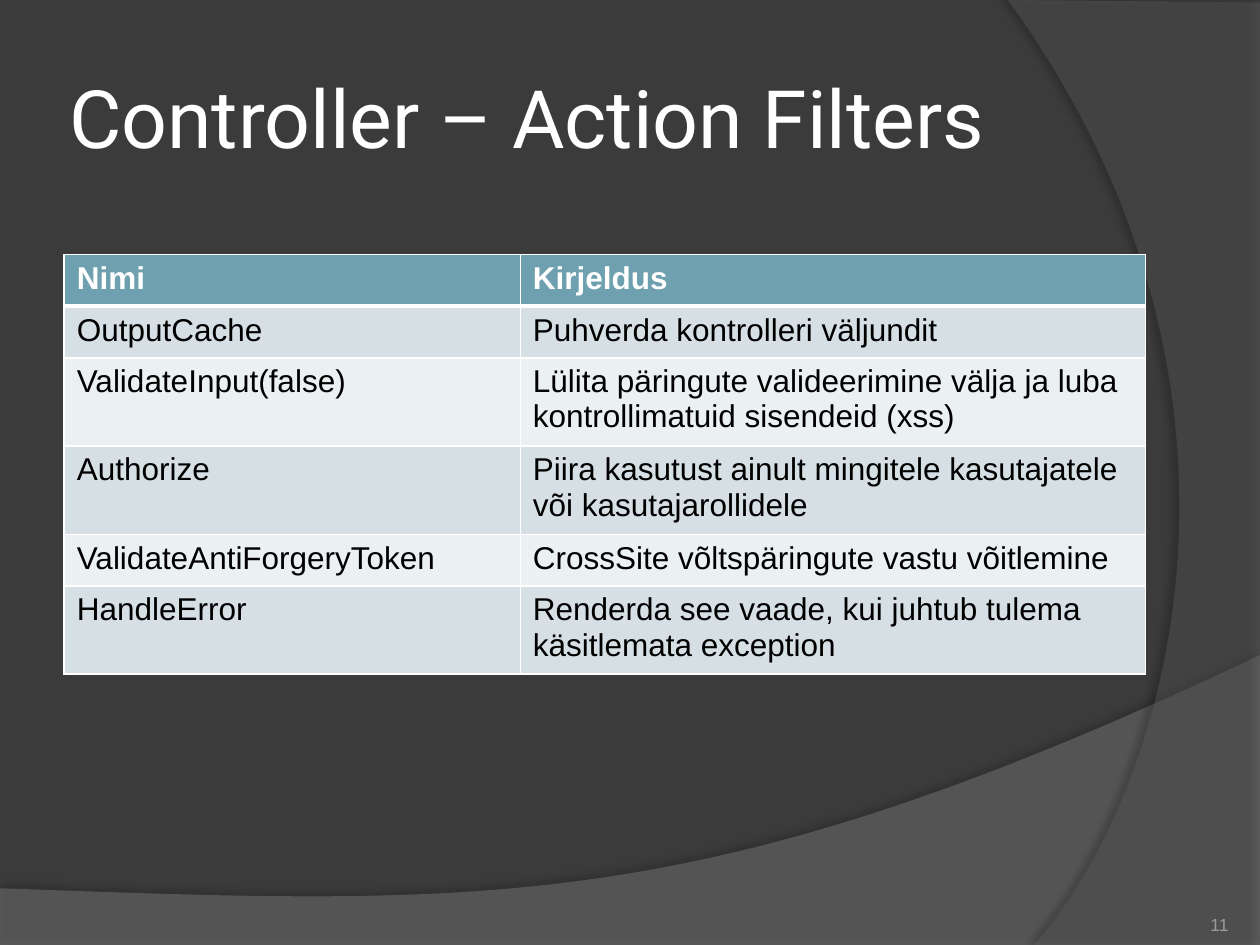
from dataclasses import dataclass

from lxml.etree import SubElement
from pptx import Presentation
from pptx.dml.color import RGBColor
from pptx.enum.text import MSO_ANCHOR, PP_ALIGN
from pptx.oxml.ns import qn
from pptx.util import Inches, Pt


@dataclass(frozen=True)
class Theme:
    background: str = "3B3B3B"
    floor_wave: str = "7F7F7F"
    side_wave: str = "5E5E5E"
    shadow: str = "000000"
    light: str = "FFFFFF"
    dark: str = "000000"
    muted: str = "9D9B9A"
    header: str = "6EA0B0"
    bands: tuple = ("D5DFE4", "EBF0F2")
    title_font: str = "Roboto"
    body_font: str = "Arial"
    title_size: int = 46
    body_size: int = 18
    number_size: int = 10


def curve(start, control_1, control_2, end, steps=60):
    """Points along a cubic Bezier curve, both ends included."""
    points = []
    for step in range(steps + 1):
        t = step / steps
        weights = ((1 - t) ** 3, 3 * t * (1 - t) ** 2, 3 * t * t * (1 - t), t ** 3)
        corners = (start, control_1, control_2, end)
        points.append(tuple(sum(w * c[axis] for w, c in zip(weights, corners))
                            for axis in (0, 1)))
    return points


def add_color(parent, color, opacity=100):
    node = SubElement(parent, qn("a:srgbClr"), val=color)
    SubElement(node, qn("a:alpha"), val=str(opacity * 1000))


class SlideBuilder:
    def __init__(self, slide, theme):
        self.slide = slide
        self.theme = theme
        fill = slide.background.fill
        fill.solid()
        fill.fore_color.rgb = RGBColor.from_string(theme.background)

    def format_text(self, paragraph, size, color, font, bold=False):
        for span in paragraph.runs:
            span.font.size = Pt(size)
            span.font.name = font
            span.font.bold = bold
            span.font.color.rgb = RGBColor.from_string(color)

    def wave(self, points, color, opacity, shadow_opacity, distance, direction):
        """Translucent outline with a soft shadow; direction is in degrees."""
        corners = [(Inches(x), Inches(y)) for x, y in points]
        builder = self.slide.shapes.build_freeform(*corners[0])
        builder.add_line_segments(corners[1:], close=True)
        shape = builder.convert_to_shape()
        shape.line.fill.background()
        shape.fill.solid()
        shape.fill.fore_color.rgb = RGBColor.from_string(color)
        color_node = shape.fill._xPr.find(qn("a:solidFill"))[0]
        SubElement(color_node, qn("a:alpha"), val=str(opacity * 1000))
        shape.shadow.inherit = False
        effects = shape._element.spPr.find(qn("a:effectLst"))
        shadow = SubElement(effects, qn("a:outerShdw"), blurRad=str(Pt(4)),
                            dist=str(Pt(distance)), dir=str(direction * 60000),
                            rotWithShape="0")
        add_color(shadow, self.theme.shadow, shadow_opacity)

    def text(self, text, bounds, size, color, font, anchor,
             align=PP_ALIGN.LEFT, margin=0):
        box = self.slide.shapes.add_textbox(*map(Inches, bounds))
        frame = box.text_frame
        frame.word_wrap = True
        frame.vertical_anchor = anchor
        frame.margin_left = frame.margin_right = Inches(margin)
        frame.margin_top = frame.margin_bottom = Inches(margin)
        frame.text = text
        frame.paragraphs[0].alignment = align
        self.format_text(frame.paragraphs[0], size, color, font)

    def cell_borders(self, cell, top=1, bottom=1):
        properties = cell._tc.get_or_add_tcPr()
        widths = {"a:lnL": 1, "a:lnR": 1, "a:lnT": top, "a:lnB": bottom}
        for tag, width in widths.items():
            border = SubElement(properties, qn(tag), w=str(Pt(width)))
            add_color(SubElement(border, qn("a:solidFill")), self.theme.light)

    def table(self, rows, left, top, column_widths, row_height):
        theme = self.theme
        table = self.slide.shapes.add_table(
            len(rows), len(column_widths), Inches(left), Inches(top),
            Inches(sum(column_widths)), Inches(row_height * len(rows))).table
        for column, width in zip(table.columns, column_widths):
            column.width = Inches(width)
        for row_index, row in enumerate(rows):
            is_header = row_index == 0
            color = theme.header if is_header else theme.bands[(row_index - 1) % 2]
            for column_index, text in enumerate(row):
                cell = table.cell(row_index, column_index)
                cell.text = text
                self.format_text(cell.text_frame.paragraphs[0], theme.body_size,
                                 theme.light if is_header else theme.dark,
                                 theme.body_font, bold=is_header)
                self.cell_borders(cell, top=3 if row_index == 1 else 1,
                                  bottom=3 if is_header else 1)
                cell.fill.solid()
                cell.fill.fore_color.rgb = RGBColor.from_string(color)


FILTERS = [
    ("Nimi", "Kirjeldus"),
    ("OutputCache", "Puhverda kontrolleri väljundit"),
    ("ValidateInput(false)",
     "Lülita päringute valideerimine välja ja luba kontrollimatuid sisendeid (xss)"),
    ("Authorize", "Piira kasutust ainult mingitele kasutajatele või kasutajarollidele"),
    ("ValidateAntiForgeryToken", "CrossSite võltspäringute vastu võitlemine"),
    ("HandleError", "Renderda see vaade, kui juhtub tulema käsitlemata exception"),
]


def main():
    deck = Presentation()
    deck.slide_width, deck.slide_height = Inches(10), Inches(7.5)
    theme = Theme()
    page = SlideBuilder(deck.slides.add_slide(deck.slide_layouts[6]), theme)

    floor = [(0, 7.5), (10, 7.5)]
    floor += curve((10, 5.2), (5.59, 7.29), (3.91, 7.19), (0, 7.05))
    page.wave(floor, theme.floor_wave, 45, 35, 3.5, 270)
    side = [(10, 0.02), (10, 7.5)]
    side += curve((8.21, 7.5), (9.35, 6.19), (10.18, 3), (8, 0))
    page.wave(side, theme.side_wave, 40, 45, 4, 180)

    page.text("Controller – Action Filters", (0.5, 0.3, 8.17, 1.25), theme.title_size,
              theme.light, theme.title_font, MSO_ANCHOR.MIDDLE, margin=0.05)
    page.table(FILTERS, 0.51, 2.02, (3.62, 4.96), 0.41)
    page.text("11", (8.92, 7.02, 0.83, 0.4), theme.number_size, theme.muted,
              theme.body_font, MSO_ANCHOR.BOTTOM, PP_ALIGN.RIGHT)
    deck.save("out.pptx")


if __name__ == "__main__":
    main()
